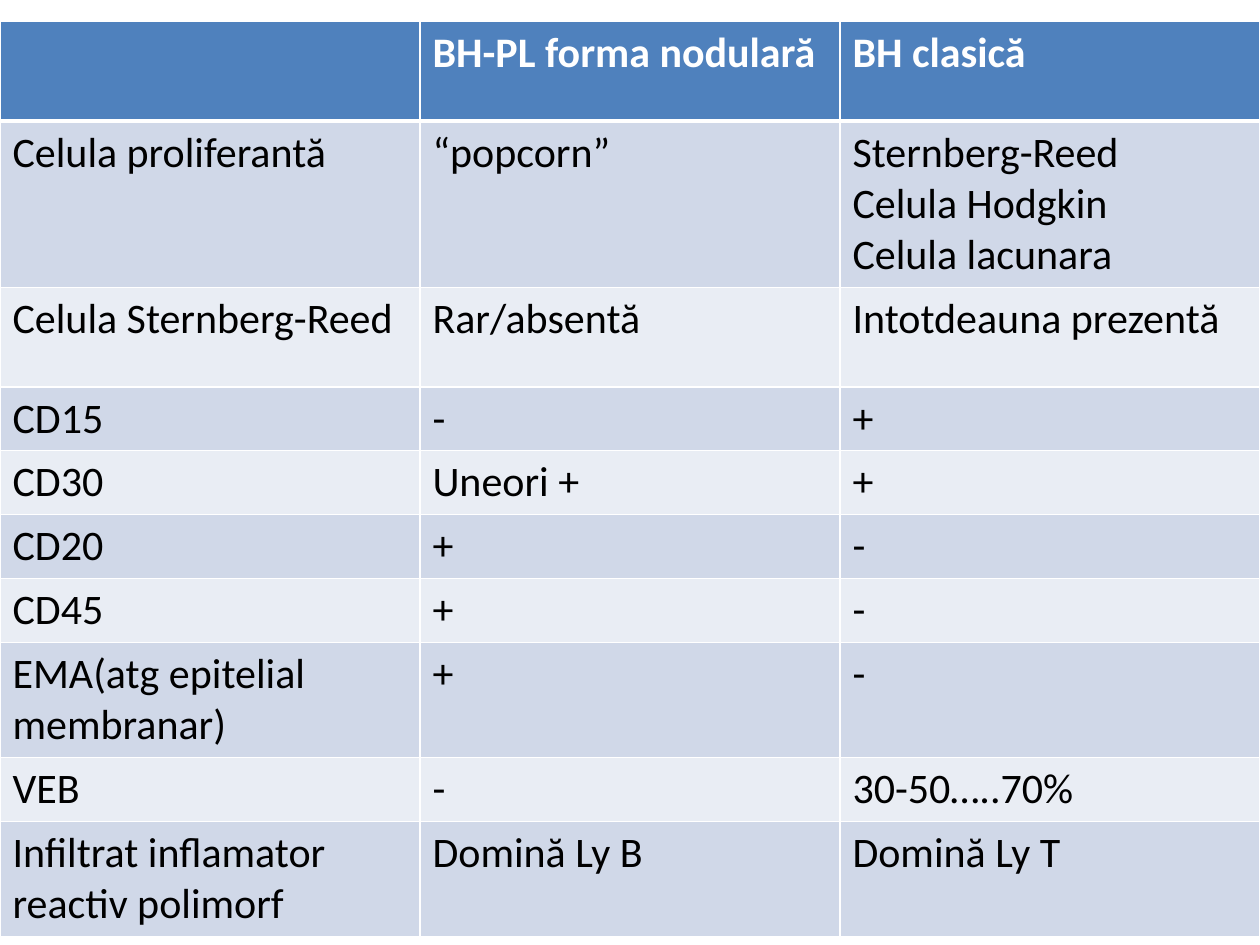
import pptx
import pptx.util
import pptx.dml.color
import pptx.oxml
import pptx.oxml.ns
from pptx.util import Inches

theme = {
    "head": "4F81BD",
    "bands": ["E9EDF4", "D0D8E8"],
    "line": "FFFFFF",
    "light": "FFFFFF",
    "dark": "000000",
    "font": "Calibri",
    "size": 24,
    "thin": 1,
    "thick": 3,
}

rows = [
    (0.79, "", "BH-PL forma nodulară", "BH clasică"),
    (1.2, "Celula proliferantă", "“popcorn”",
     "Sternberg-Reed\nCelula Hodgkin\nCelula lacunara"),
    (0.79, "Celula Sternberg-Reed", "Rar/absentă", "Intotdeauna prezentă"),
    (0.46, "CD15", "-", "+"),
    (0.46, "CD30", "Uneori +", "+"),
    (0.46, "CD20", "+", "-"),
    (0.46, "CD45", "+", "-"),
    (0.83, "EMA(atg epitelial membranar)", "+", "-"),
    (0.46, "VEB", "-", "30-50…..70%"),
    (0.83, "Infiltrat inflamator reactiv polimorf", "Domină Ly B", "Domină Ly T"),
]


def tint(text):
    return pptx.dml.color.RGBColor.from_string(text)


def edge(cell, sides):
    props = cell._tc.get_or_add_tcPr()
    for spot, (side, width) in enumerate(sides.items()):
        line = pptx.oxml.parse_xml(
            f'<a:ln{side} {pptx.oxml.ns.nsdecls("a")} w="{pptx.util.Pt(width)}">'
            f'<a:solidFill><a:srgbClr val="{theme["line"]}"/></a:solidFill>'
            f'<a:prstDash val="solid"/></a:ln{side}>'
        )
        props.insert(spot, line)


deck = pptx.Presentation()
deck.slide_width = Inches(10)
deck.slide_height = Inches(7.5)
slide = deck.slides.add_slide(deck.slide_layouts[6])

high = sum(row[0] for row in rows)
frame = slide.shapes.add_table(
    len(rows), 3, Inches(0), Inches(0.17), Inches(10), Inches(high)
)
table = frame.table

for r, (tall, *texts) in enumerate(rows):
    table.rows[r].height = Inches(tall)
    head = r == 0
    fill = theme["head"] if head else theme["bands"][r % 2]
    style = {
        "name": theme["font"],
        "size": pptx.util.Pt(theme["size"]),
        "bold": head,
    }
    sides = dict.fromkeys("LRTB", theme["thin"])
    if head:
        sides["B"] = theme["thick"]
    elif r == 1:
        sides["T"] = theme["thick"]
    for c, text in enumerate(texts):
        cell = table.cell(r, c)
        cell.fill.solid()
        cell.fill.fore_color.rgb = tint(fill)
        edge(cell, sides)
        cell.text = text
        for para in cell.text_frame.paragraphs:
            for run in para.runs:
                for key, value in style.items():
                    setattr(run.font, key, value)
                run.font.color.rgb = tint(theme["light" if head else "dark"])

deck.save("out.pptx")
